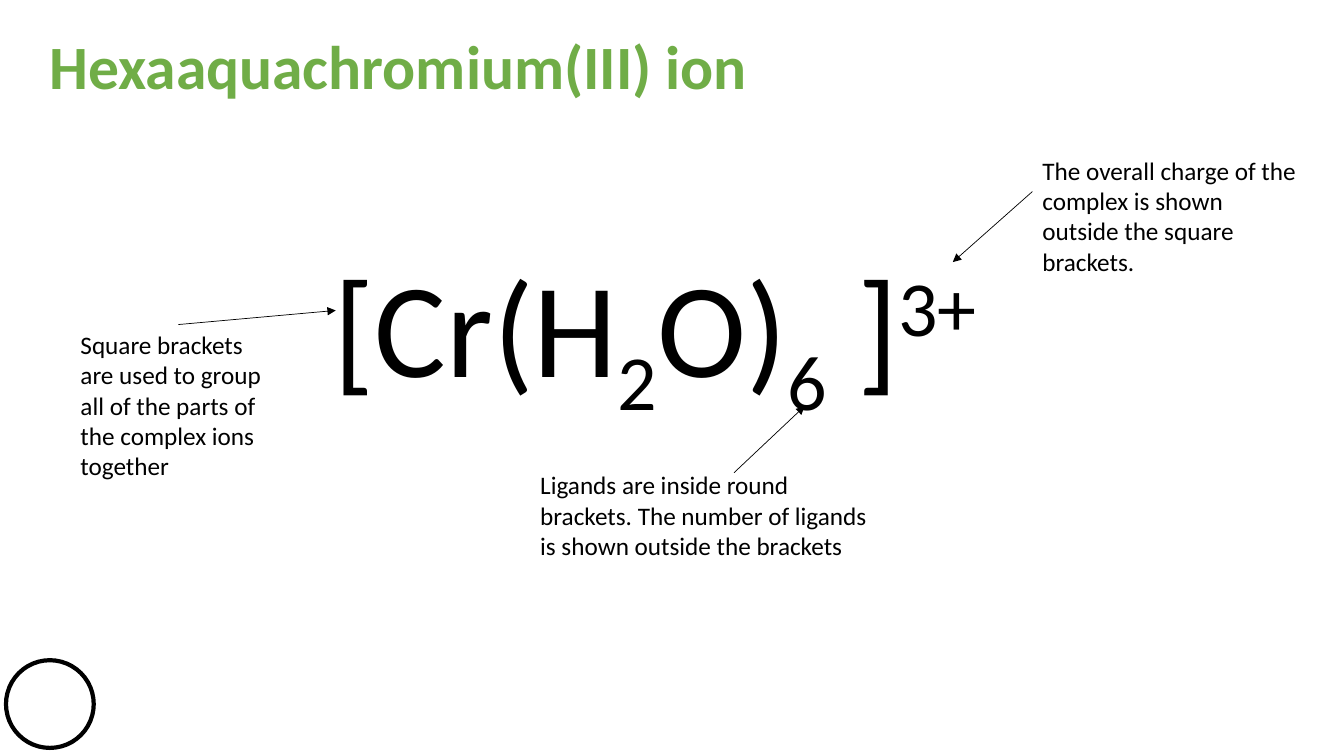
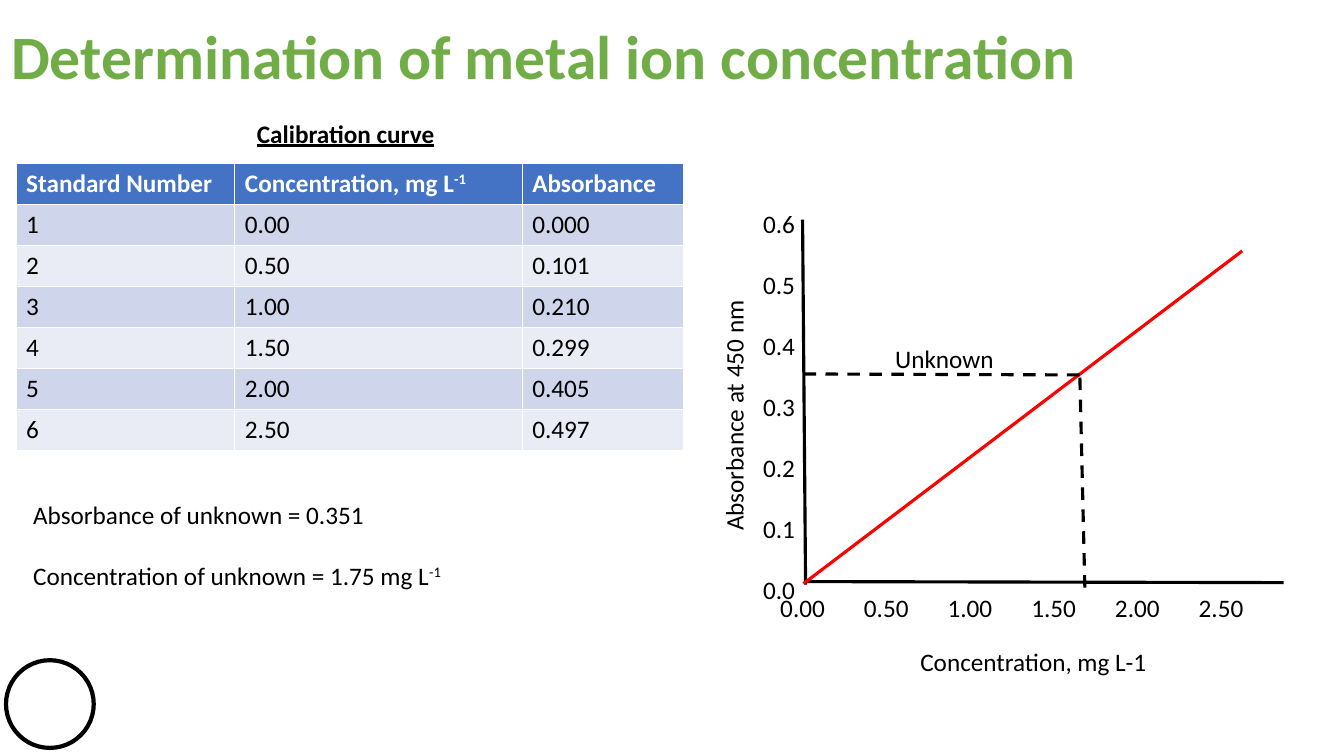
import lxml.etree
import pptx
import pptx.dml.color
import pptx.enum.dml
import pptx.enum.shapes
import pptx.enum.text
import pptx.oxml.ns
import pptx.util

Inches = pptx.util.Inches
Pt = pptx.util.Pt
color = pptx.dml.color.RGBColor.from_string
qn = pptx.oxml.ns.qn

BLACK, WHITE, RED, GREEN = "000000", "FFFFFF", "FF0000", "70AD47"
HEADER_FILL, BAND_FILLS = "4472C4", ("CFD5EA", "E9EBF5")
BODY = {"name": "Calibri", "size": Pt(18), "bold": False}
TITLE = {"name": "Calibri", "size": Pt(44), "bold": True}
FORMULA = {**BODY, "size": Pt(96)}
HEADER = {**BODY, "bold": True}
HEADING = {**HEADER, "underline": True}
LINE_GAP = Pt(22)
SUBSCRIPT, SUPERSCRIPT = -25000, 30000


def write_text(shape, paragraphs, font=BODY, font_color=BLACK):
    """Write paragraphs, each a string or a list of (text, baseline) runs."""
    frame = shape.text_frame
    frame.word_wrap = True
    for index, runs in enumerate(paragraphs):
        paragraph = frame.add_paragraph() if index else frame.paragraphs[0]
        paragraph.alignment = pptx.enum.text.PP_ALIGN.LEFT
        if index:
            paragraph.space_before = LINE_GAP
        for text, baseline in [(runs, 0)] if isinstance(runs, str) else runs:
            run = paragraph.add_run()
            run.text = text
            for name, value in font.items():
                setattr(run.font, name, value)
            run.font.color.rgb = color(font_color)
            if baseline:
                run.font._element.set("baseline", str(baseline))


def add_line(slide, start, end, width, line_color=BLACK, dashed=False, arrow=False):
    connector = slide.shapes.add_connector(
        pptx.enum.shapes.MSO_CONNECTOR.STRAIGHT, *map(Inches, start + end))
    connector.line.width = Pt(width)
    connector.line.color.rgb = color(line_color)
    if dashed:
        connector.line.dash_style = pptx.enum.dml.MSO_LINE.DASH
    properties = connector.element.spPr
    if arrow:
        lxml.etree.SubElement(properties.find(qn("a:ln")), qn("a:tailEnd"), type="triangle")
    lxml.etree.SubElement(properties, qn("a:effectLst"))
    return connector


presentation = pptx.Presentation()
presentation.slide_width = Inches(13.33)
presentation.slide_height = Inches(7.5)

# Titles
slides = []
for title_text, box in [
    ("Hexaaquachromium(III) ion", (0.39, 0.23, 7.96, 0.84)),
    ("Determination of metal ion concentration", (0.01, 0.13, 13.32, 0.84)),
]:
    slide = presentation.slides.add_slide(presentation.slide_layouts[5])
    title = slide.shapes.title
    title.left, title.top, title.width, title.height = map(Inches, box)
    title.text_frame.vertical_anchor = pptx.enum.text.MSO_ANCHOR.TOP
    title.text_frame.auto_size = pptx.enum.text.MSO_AUTO_SIZE.NONE
    write_text(title, [title_text], TITLE, GREEN)
    slides.append(slide)
ion_slide, calibration_slide = slides

# Corner circle, kept on the slide master
circle = ion_slide.shapes.add_shape(
    pptx.enum.shapes.MSO_SHAPE.OVAL, *map(Inches, (0.06, 6.55, 0.87, 0.87)))
circle.shadow.inherit = False
circle.fill.solid()
circle.fill.fore_color.rgb = color(WHITE)
circle.line.color.rgb = color(BLACK)
circle.line.width = Pt(3)
circle.element.nvSpPr.cNvPr.set("id", "20")
presentation.slide_master.shapes.element.append(circle.element)

# Complex ion and its annotations
formula = ion_slide.shapes.add_textbox(*map(Inches, (3.21, 2.36, 7.7, 1.72)))
write_text(formula, [[
    ("[Cr(H", 0), ("2", SUBSCRIPT), ("O)", 0), ("6", SUBSCRIPT),
    (" ]", 0), ("3+", SUPERSCRIPT),
]], FORMULA)

for note_text, box, start, end, from_top in [
    ("Square brackets are used to group all of the parts of the complex ions together",
     (0.7, 3.22, 2.14, 1.62), (1.77, 3.22), (3.33, 3.08), True),
    ("Ligands are inside round brackets. The number of ligands is shown outside the brackets",
     (5.26, 4.61, 3.46, 1.01), (7.28, 4.69), (7.98, 4.03), False),
    ("The overall charge of the complex is shown outside the square brackets.",
     (10.24, 1.49, 2.79, 1.31), (10.24, 1.9), (9.45, 2.6), False),
]:
    note = ion_slide.shapes.add_textbox(*map(Inches, box))
    write_text(note, [note_text])
    arrow = add_line(ion_slide, start, end, 0.5, arrow=True)
    if from_top:
        arrow.begin_connect(note, 0)

# Calibration table
rows = [
    ("Standard Number", [("Concentration, mg L", 0), ("-1", SUPERSCRIPT)], "Absorbance"),
    ("1", "0.00", "0.000"),
    ("2", "0.50", "0.101"),
    ("3", "1.00", "0.210"),
    ("4", "1.50", "0.299"),
    ("5", "2.00", "0.405"),
    ("6", "2.50", "0.497"),
]
table = calibration_slide.shapes.add_table(
    len(rows), 3, *map(Inches, (0.16, 1.62, 6.62, 2.85))).table
for column, width in zip(table.columns, (2.17, 2.85, 1.6)):
    column.width = Inches(width)
for row_index, row in enumerate(rows):
    for column_index, value in enumerate(row):
        cell = table.cell(row_index, column_index)
        cell.fill.solid()
        if row_index == 0:
            cell.fill.fore_color.rgb = color(HEADER_FILL)
            write_text(cell, [value], HEADER, WHITE)
        else:
            cell.fill.fore_color.rgb = color(BAND_FILLS[(row_index - 1) % 2])
            write_text(cell, [value])

# Sketched calibration graph
for start, end, line_color, dashed in [
    ((7.96, 2.18), (7.99, 5.8), BLACK, False),
    ((12.73, 5.78), (8, 5.77), BLACK, False),
    ((12.32, 2.49), (7.97, 5.79), RED, False),
    ((7.97, 3.71), (10.73, 3.72), BLACK, True),
    ((10.76, 5.83), (10.71, 3.72), BLACK, True),
]:
    add_line(calibration_slide, start, end, 2.25, line_color, dashed)

absorbance_ticks = [f"{tick / 10:.1f}" for tick in range(6, -1, -1)]
for paragraphs, box, font, rotation in [
    (["Calibration curve"], (2.45, 1.12, 2.03, 0.4), HEADING, 0),
    (["Absorbance of unknown = 0.351",
      [("Concentration of unknown = 1.75 mg L", 0), ("-1", SUPERSCRIPT)]],
     (0.23, 4.9, 5.51, 1.01), BODY, 0),
    (["Absorbance at 450 nm"], (5.9, 3.79, 2.75, 0.4), BODY, 270),
    (["Concentration, mg L-1"], (9.03, 6.36, 3.23, 0.4), BODY, 0),
    (["Unknown"], (8.78, 3.36, 1.4, 0.4), BODY, 0),
    (absorbance_ticks, (7.47, 2.02, 1.27, 4.34), BODY, 0),
]:
    label = calibration_slide.shapes.add_textbox(*map(Inches, box))
    label.rotation = rotation
    write_text(label, paragraphs, font)

concentration_ticks = [f"{tick / 2:.2f}" for tick in range(6)]
tick_row = calibration_slide.shapes.add_textbox(*map(Inches, (7.64, 5.83, 5.08, 0.4)))
tab_list = lxml.etree.SubElement(
    tick_row.text_frame.paragraphs[0]._p.get_or_add_pPr(), qn("a:tabLst"))
for tick in range(1, len(concentration_ticks)):
    lxml.etree.SubElement(tab_list, qn("a:tab"), pos=str(Inches(0.83 * tick)), algn="l")
write_text(tick_row, ["\t".join(concentration_ticks)])

presentation.save("out.pptx")
